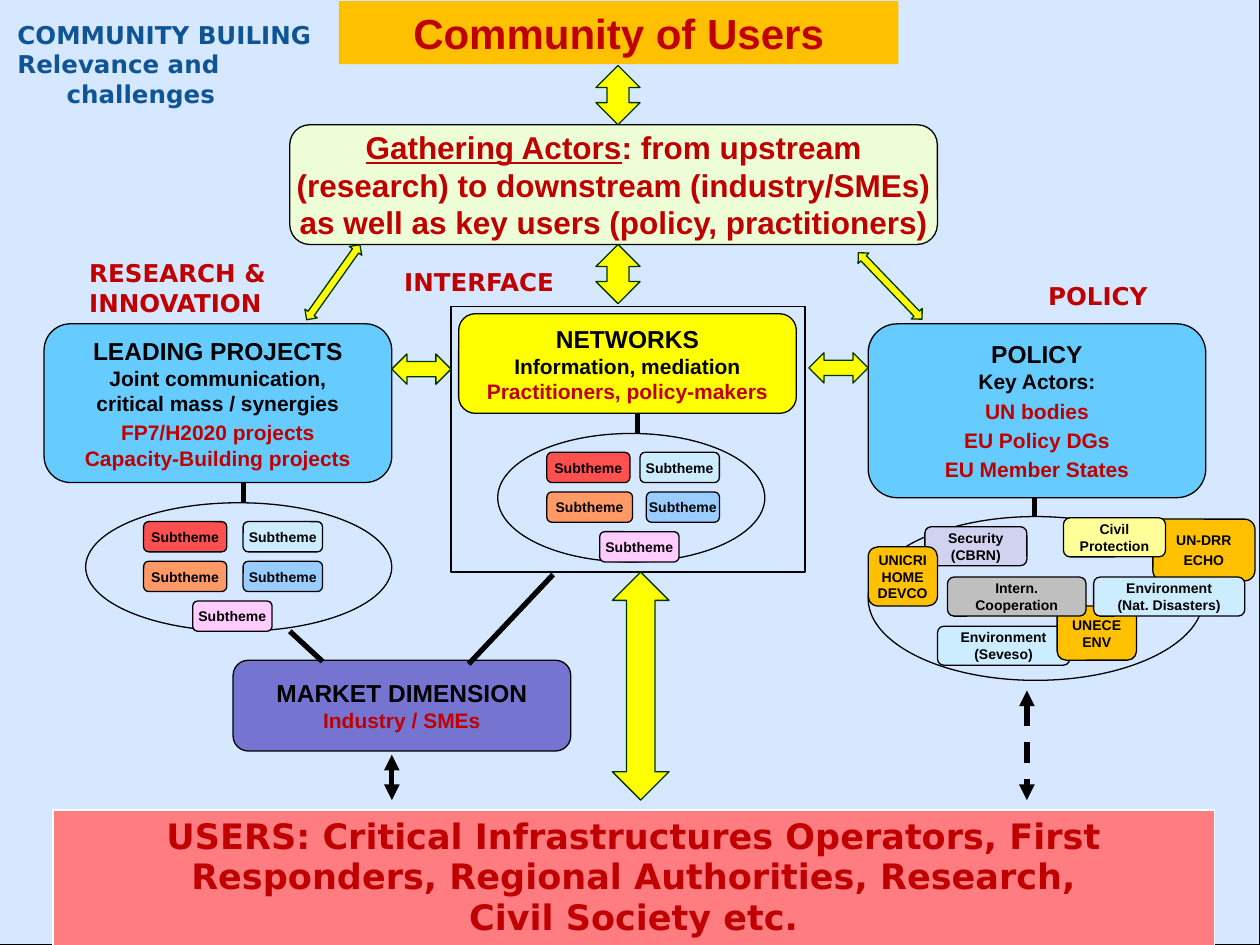
from dataclasses import dataclass, field
from itertools import product

from lxml import etree
from pptx import Presentation, util as u
from pptx.dml.color import RGBColor
from pptx.enum import dml, shapes, text
from pptx.oxml import ns

KIND = shapes.MSO_SHAPE
MID = text.MSO_ANCHOR.MIDDLE
TOP = text.MSO_ANCHOR.TOP
CENTRE = text.PP_ALIGN.CENTER
LEFT = text.PP_ALIGN.LEFT
COLS, ROWS = 100, 75


@dataclass
class Theme:
    ink: dict = field(default_factory=lambda: dict(
        black="000000", white="FFFFFF", red="C00000", navy="0F5494", edge="003300",
        back="D5E8FF", lime="EDFED6", yellow="FFFF00", sky="66CCFF", violet="7575D1",
        amber="FFC000", rose="FF7C80", coral="FF5050", orange="FF9966", blue="99CCFF",
        ice="CCECFF", pink="FFCCFF", lilac="D1D1F0", grey="BFBFBF", lemon="FFFF99"))
    # style: size, font, colour, underline
    type: dict = field(default_factory=lambda: dict(
        title=(24, "Arial", "red", False), users=(20, "DejaVu Sans", "red", False),
        lead=(18, "Arial", "red", False), under=(18, "Arial", "red", True),
        topic=(14, "DejaVu Sans", "navy", False), label=(14, "DejaVu Sans", "red", False),
        head=(14, "Arial", "black", False), body=(12, "Arial", "black", False),
        key=(12, "Arial", "red", False), chip=(8, "Arial", "black", False)))

    def rgb(self, name):
        return RGBColor.from_string(self.ink[name])


class Page:
    def __init__(self, theme):
        self.theme = theme
        self.deck = Presentation()
        self.deck.slide_width, self.deck.slide_height = u.Inches(10), u.Inches(7.5)
        self.slide = self.deck.slides.add_slide(self.deck.slide_layouts[6])
        self.items = self.slide.shapes

    def place(self, *grid):
        """Turn alternating columns and rows into slide lengths."""
        steps = (self.deck.slide_width / COLS, self.deck.slide_height / ROWS)
        return [u.Emu(round(n * steps[i % 2])) for i, n in enumerate(grid)]

    def fill_text(self, frame, paras, align):
        """Fill a frame; each paragraph is a list of (style, words)."""
        for i, runs in enumerate(paras):
            para = frame.paragraphs[0] if i == 0 else frame.add_paragraph()
            para.alignment = align
            if i and align == CENTRE:
                para.space_before = u.Pt(self.theme.type[runs[0][0]][0] * 0.2)
            for style, words in runs:
                for j, line in enumerate(words.split("\n")):
                    if j:
                        para.add_line_break()
                    run = para.add_run()
                    run.text = line
                    size, face, tint, under = self.theme.type[style]
                    look = dict(size=u.Pt(size), name=face, bold=True, underline=under)
                    for name, value in look.items():
                        setattr(run.font, name, value)
                    run.font.color.rgb = self.theme.rgb(tint)

    def shape(self, kind, at, fill=None, line="black", paras=(), anchor=MID):
        item = self.items.add_shape(kind, *self.place(*at))
        item.shadow.inherit = False
        if fill:
            item.fill.solid()
            item.fill.fore_color.rgb = self.theme.rgb(fill)
        else:
            item.fill.background()
        if line:
            item.line.color.rgb = self.theme.rgb(line)
            item.line.width = u.Pt(0.75)
        else:
            item.line.fill.background()
        item.text_frame.word_wrap = False
        item.text_frame.vertical_anchor = anchor
        self.fill_text(item.text_frame, paras, CENTRE)
        return item

    def box(self, at, fill, *paras):
        return self.shape(KIND.ROUNDED_RECTANGLE, at, fill, paras=paras)

    def chip(self, at, fill, *words):
        return self.box(at, fill, *[[("chip", w)] for w in words])

    def arrow(self, at, turn=0):
        item = self.shape(KIND.LEFT_RIGHT_ARROW, at, "yellow", "edge")
        item.rotation = turn

    def label(self, at, style, *lines, wrap=False, hang=0):
        item = self.items.add_textbox(*self.place(*at))
        frame = item.text_frame
        look = dict(word_wrap=wrap, vertical_anchor=TOP)
        if not wrap:
            look["auto_size"] = text.MSO_AUTO_SIZE.SHAPE_TO_FIT_TEXT
        for name, value in look.items():
            setattr(frame, name, value)
        self.fill_text(frame, [[(style, w)] for w in lines], LEFT)
        if hang:
            for para in frame.paragraphs:
                prop = para._p.get_or_add_pPr()
                prop.set("marL", str(u.Inches(hang)))
                prop.set("indent", str(-u.Inches(hang)))

    def line(self, ends, dashed=False):
        item = self.items.add_connector(shapes.MSO_CONNECTOR.STRAIGHT, *self.place(*ends))
        item.line.color.rgb = self.theme.rgb("black")
        item.line.width = u.Pt(3)
        if dashed:
            item.line.dash_style = dml.MSO_LINE.DASH
            for end in ("a:headEnd", "a:tailEnd"):
                etree.SubElement(item.line._ln, ns.qn(end), type="triangle")
        etree.SubElement(item._element.spPr, ns.qn("a:effectLst"))

    def band(self, at, fill, style, *lines):
        """A table of one cell, edged in white."""
        table = self.items.add_table(1, 1, *self.place(*at)).table
        table.first_row = table.horz_banding = False
        cell = table.cell(0, 0)
        prop = cell._tc.get_or_add_tcPr()
        for side, width in dict(L=1, R=1, T=1, B=3).items():
            edge = etree.SubElement(prop, ns.qn(f"a:ln{side}"), w=str(u.Pt(width)))
            paint = etree.SubElement(edge, ns.qn("a:solidFill"))
            etree.SubElement(paint, ns.qn("a:srgbClr"), val=self.theme.ink["white"])
        cell.fill.solid()
        cell.fill.fore_color.rgb = self.theme.rgb(fill)
        self.fill_text(cell.text_frame, [[(style, w)] for w in lines], CENTRE)
        for para in cell.text_frame.paragraphs:
            para.space_before = u.Pt(0)

    def cluster(self, oval, left, top, gaps, wide, last):
        """An oval with two rows of two subthemes and one below them."""
        self.shape(KIND.OVAL, oval)
        tints = ("coral", "ice", "orange", "blue")
        for (row, col), tint, width in zip(product(range(2), range(2)), tints, wide):
            self.chip((left + col * gaps[row], top + row * 3.15, width, 2.4), tint, "Subtheme")
        self.chip((last, top + 6.3, 6.3, 2.4), "pink", "Subtheme")


def main():
    page = Page(Theme())
    page.shape(KIND.RECTANGLE, (-0.6, -0.3, 100.6, 75.3), "back")
    page.label((0.4, 1.1, 29.9, 9.6), "topic", "COMMUNITY BUILING",
               "Relevance and challenges", wrap=True, hang=0.39)
    page.box((23, 9.9, 51.4, 9.5), "lime", [
        ("under", "Gathering Actors"),
        ("lead", ": from upstream\n(research) to downstream (industry/SMEs)\n"
                 "as well as key users (policy, practitioners)")])

    # Networks
    page.shape(KIND.RECTANGLE, (35.8, 24.3, 28.1, 21.1))
    page.label((31.1, 20.7, 14.6, 3.4), "label", "INTERFACE")
    page.box((36.4, 24.9, 26.8, 7.9), "yellow", [
        ("head", "NETWORKS\n"), ("body", "Information, mediation\n"),
        ("key", "Practitioners, policy-makers")])
    page.cluster((39.5, 34.4, 21.2, 10.2), 43.4, 35.9, (7.4, 7.9), (6.6, 6.3, 6.8, 5.8), 47.6)

    # Leading projects
    page.box((3.5, 25.7, 27.6, 12.6), "sky",
             [("head", "LEADING PROJECTS\n"),
              ("body", "Joint communication,\ncritical mass / synergies")],
             [("key", "FP7/H2020 projects\nCapacity-Building projects")])
    page.label((6.1, 20, 16.9, 5.7), "label", "RESEARCH &", "INNOVATION")
    page.cluster((6.8, 39.9, 24.3, 10.2), 11.4, 41.4, (7.9, 7.9), (6.6, 6.3, 6.6, 6.3), 15.3)

    # Market
    page.box((18.5, 52.4, 26.8, 7.2), "violet",
             [("head", "MARKET DIMENSION\n"), ("key", "Industry / SMEs")])

    # Policy
    page.box((68.9, 25.7, 26.8, 13.8), "sky",
             [("head", "POLICY\n"), ("body", "Key Actors:")],
             *[[("key", w)] for w in ("UN bodies", "EU Policy DGs", "EU Member States")])
    page.label((82.2, 21.8, 10.3, 3.4), "label", "POLICY")
    page.shape(KIND.OVAL, (68.9, 41, 26.6, 13))
    for at, tint, *words in (
            ((74.4, 49.7, 10.5, 3.1), "ice", "Environment\n(Seveso)"),
            ((73.4, 41.8, 8.1, 3.1), "lilac", "Security\n(CBRN)"),
            ((83.9, 48.1, 6.3, 4.3), "amber", "UNECE\nENV"),
            ((75.2, 45.8, 11, 3.1), "grey", "Intern.\nCooperation"),
            ((91.5, 41.2, 8.1, 4.9), "amber", "UN-DRR", "ECHO"),
            ((84.4, 41.1, 8.1, 3.1), "lemon", "Civil\nProtection"),
            ((68.9, 43.4, 5.5, 4.7), "amber", "UNICRI\nHOME\nDEVCO"),
            ((86.8, 45.8, 12, 3.1), "ice", "Environment\n(Nat. Disasters)")):
        page.chip(at, tint, *words)

    page.band((4.2, 64.3, 92.2, 11), "rose", "users",
              "USERS: Critical Infrastructures Operators, First Responders, "
              "Regional Authorities, Research,", "Civil Society etc.")
    title = page.shape(KIND.RECTANGLE, (26.9, 0.1, 44.4, 5), "amber", None,
                       [[("title", "Community of Users")]], TOP)
    title.text_frame.word_wrap = True

    # Links
    for ends in ((50.6, 32.8, 50.6, 34.4), (19.3, 38.3, 19.3, 39.9), (82.1, 39.5, 82.1, 41),
                 (23, 50.1, 25.6, 52.5), (43.9, 45.6, 37.2, 52.7)):
        page.line(ends)
    for col, row in ((81.5, 54.8), (31.1, 59.9)):
        page.line((col, row, col, 63.5), dashed=True)
    for at, turn in (((46.7, 5.8, 4.7, 3.5), 90), ((46.7, 20, 4.7, 3.5), 90),
                     ((41.8, 52.2, 18.1, 4.5), 90), ((22.8, 21.8, 7.3, 1.2), 125.4),
                     ((67, 22.1, 7.3, 1.2), 46.2), ((31.1, 28.1, 4.7, 2.4), 0),
                     ((64.2, 28, 4.7, 2.4), 0)):
        page.arrow(at, turn)
    page.deck.save("out.pptx")


if __name__ == "__main__":
    main()
